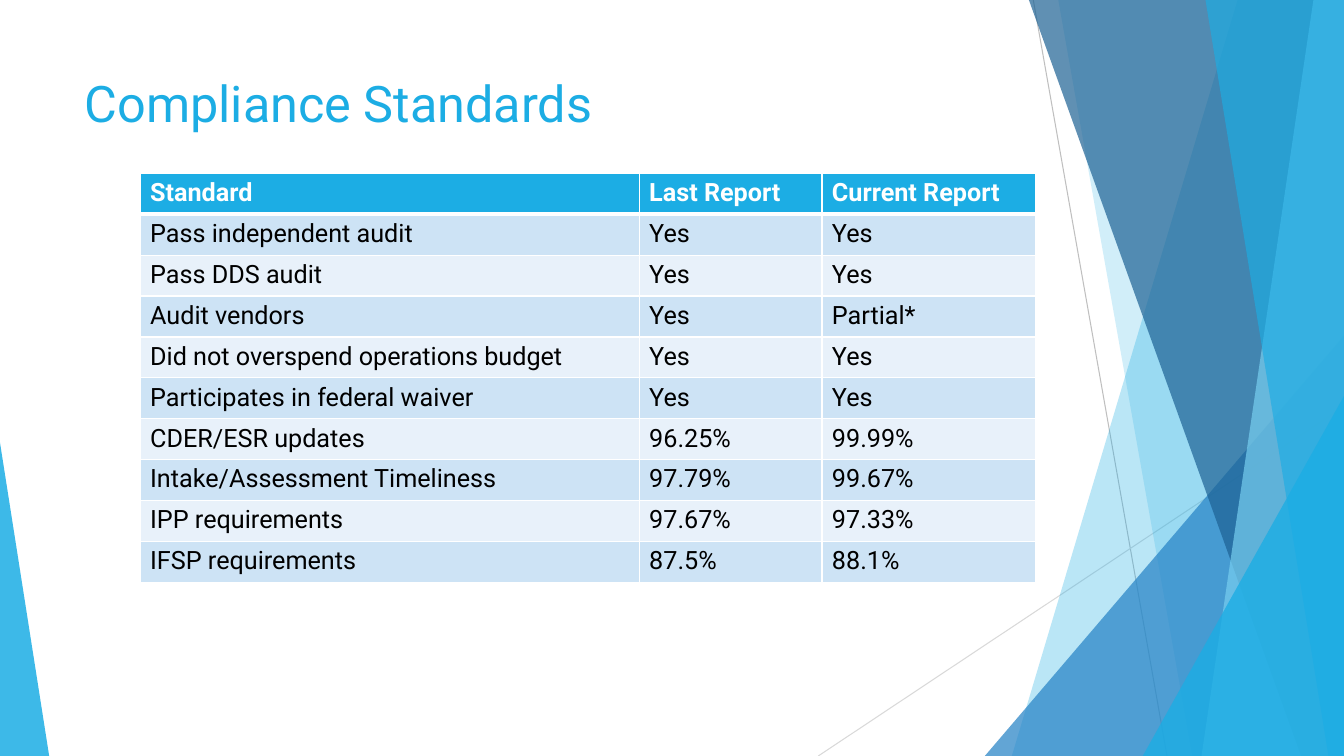
from lxml.etree import SubElement
from pptx import Presentation
from pptx.dml.color import RGBColor
from pptx.enum.shapes import MSO_CONNECTOR, MSO_SHAPE
from pptx.enum.text import MSO_ANCHOR, PP_ALIGN
from pptx.oxml.ns import qn
from pptx.util import Cm, Pt

WIDTH, HEIGHT = 33.87, 19.05
COLORS = {
    "accent": "1CADE4",
    "blue": "2683C6",
    "navy": "1D6294",
    "sky": "77CEEF",
    "band_dark": "CDE3F5",
    "band_light": "E8F1FA",
    "white": "FFFFFF",
    "black": "000000",
    "line_dark": "BFBFBF",
    "line_light": "D9D9D9",
}
STANDARDS = [
    ("Standard", "Last Report", "Current Report"),
    ("Pass independent audit", "Yes", "Yes"),
    ("Pass DDS audit", "Yes", "Yes"),
    ("Audit vendors", "Yes", "Partial*"),
    ("Did not overspend operations budget", "Yes", "Yes"),
    ("Participates in federal waiver", "Yes", "Yes"),
    ("CDER/ESR updates", "96.25%", "99.99%"),
    ("Intake/Assessment Timeliness", "97.79%", "99.67%"),
    ("IPP requirements", "97.67%", "97.33%"),
    ("IFSP requirements", "87.5%", "88.1%"),
]
COLUMN_SHARES = (0.557, 0.204, 0.239)


def rgb(name):
    return RGBColor.from_string(COLORS[name])


def write_text(frame, text, size=18, color="black", bold=False):
    paragraph = frame.paragraphs[0]
    paragraph.alignment = PP_ALIGN.LEFT
    run = paragraph.add_run()
    run.text = text
    run.font.name = "Roboto"
    run.font.size = Pt(size)
    run.font.bold = bold
    run.font.color.rgb = rgb(color)


def paint(shape, color, opacity):
    shape.shadow.inherit = False
    shape.line.fill.background()
    shape.fill.solid()
    shape.fill.fore_color.rgb = rgb(color)
    hue = shape.fill._xPr.find(qn("a:solidFill"))[0]
    SubElement(hue, qn("a:alpha"), val=str(opacity * 1000))


def add_ray(slide, start, end, color):
    ray = slide.shapes.add_connector(
        MSO_CONNECTOR.STRAIGHT, *(Cm(value) for value in start + end))
    ray.line.color.rgb = rgb(color)
    ray.line.width = Pt(0.75)
    SubElement(ray._element.spPr, qn("a:effectLst"))


def add_shard(slide, top_x, bottom_x, color, opacity):
    outline = slide.shapes.build_freeform(Cm(top_x), 0)
    corners = [(WIDTH, 0), (WIDTH, HEIGHT), (bottom_x, HEIGHT)]
    outline.add_line_segments([(Cm(x), Cm(y)) for x, y in corners], close=True)
    paint(outline.convert_to_shape(), color, opacity)


def add_wedge(slide, left, top, width, apex, color, opacity):
    wedge = slide.shapes.add_shape(
        MSO_SHAPE.ISOSCELES_TRIANGLE, Cm(left), Cm(top), Cm(width), Cm(HEIGHT - top))
    wedge.adjustments[0] = apex
    paint(wedge, color, opacity)


def add_facets(slide):
    add_ray(slide, (26.04, 0), (29.41, HEIGHT), "line_dark")
    add_ray(slide, (WIDTH, 10.24), (20.62, HEIGHT), "line_light")
    add_shard(slide, 31.19, 25.5, "accent", 30)
    add_shard(slide, 26.67, 30.05, "accent", 20)
    add_wedge(slide, 24.82, 8.46, WIDTH - 24.82, 1, "blue", 72)
    add_shard(slide, 25.93, 32.79, "navy", 70)
    add_shard(slide, 33.1, 30.28, "sky", 70)
    add_shard(slide, 30.38, 33.48, "accent", 65)
    add_wedge(slide, 28.8, 9.98, WIDTH - 28.8, 1, "accent", 80)
    add_wedge(slide, 0, 11.15, 1.24, 0, "accent", 85)


def add_title(slide, left, top, width, height):
    title = slide.shapes.title
    title.left, title.top, title.width, title.height = map(Cm, (left, top, width, height))
    title.text_frame.vertical_anchor = MSO_ANCHOR.TOP
    title.text_frame.word_wrap = True
    write_text(title.text_frame, "Compliance Standards", size=36, color="accent")


def border_cell(cell, bottom):
    properties = cell._tc.get_or_add_tcPr()
    for side, weight in (("L", 1), ("R", 1), ("T", 1), ("B", bottom)):
        edge = SubElement(properties, qn(f"a:ln{side}"), w=str(Pt(weight)))
        SubElement(SubElement(edge, qn("a:solidFill")), qn("a:srgbClr"), val=COLORS["white"])


def add_standards(slide, left, top, width, height):
    table = slide.shapes.add_table(
        len(STANDARDS), len(COLUMN_SHARES), Cm(left), Cm(top), Cm(width), Cm(height)).table
    for column, share in zip(table.columns, COLUMN_SHARES):
        column.width = Cm(width * share)
    for index, standard in enumerate(STANDARDS):
        header = index == 0
        band = "accent" if header else ("band_light", "band_dark")[index % 2]
        for cell, text in zip(table.rows[index].cells, standard):
            border_cell(cell, bottom=3 if header else 1)
            cell.fill.solid()
            cell.fill.fore_color.rgb = rgb(band)
            write_text(cell.text_frame, text, color="white" if header else "black", bold=header)


def main():
    deck = Presentation()
    deck.slide_width, deck.slide_height = Cm(WIDTH), Cm(HEIGHT)
    slide = deck.slides.add_slide(deck.slide_layouts[5])
    add_facets(slide)
    add_title(slide, 1.88, 1.7, 23.88, 3.66)
    add_standards(slide, 3.53, 4.37, 22.58, 10.3)
    deck.save("out.pptx")


if __name__ == "__main__":
    main()
